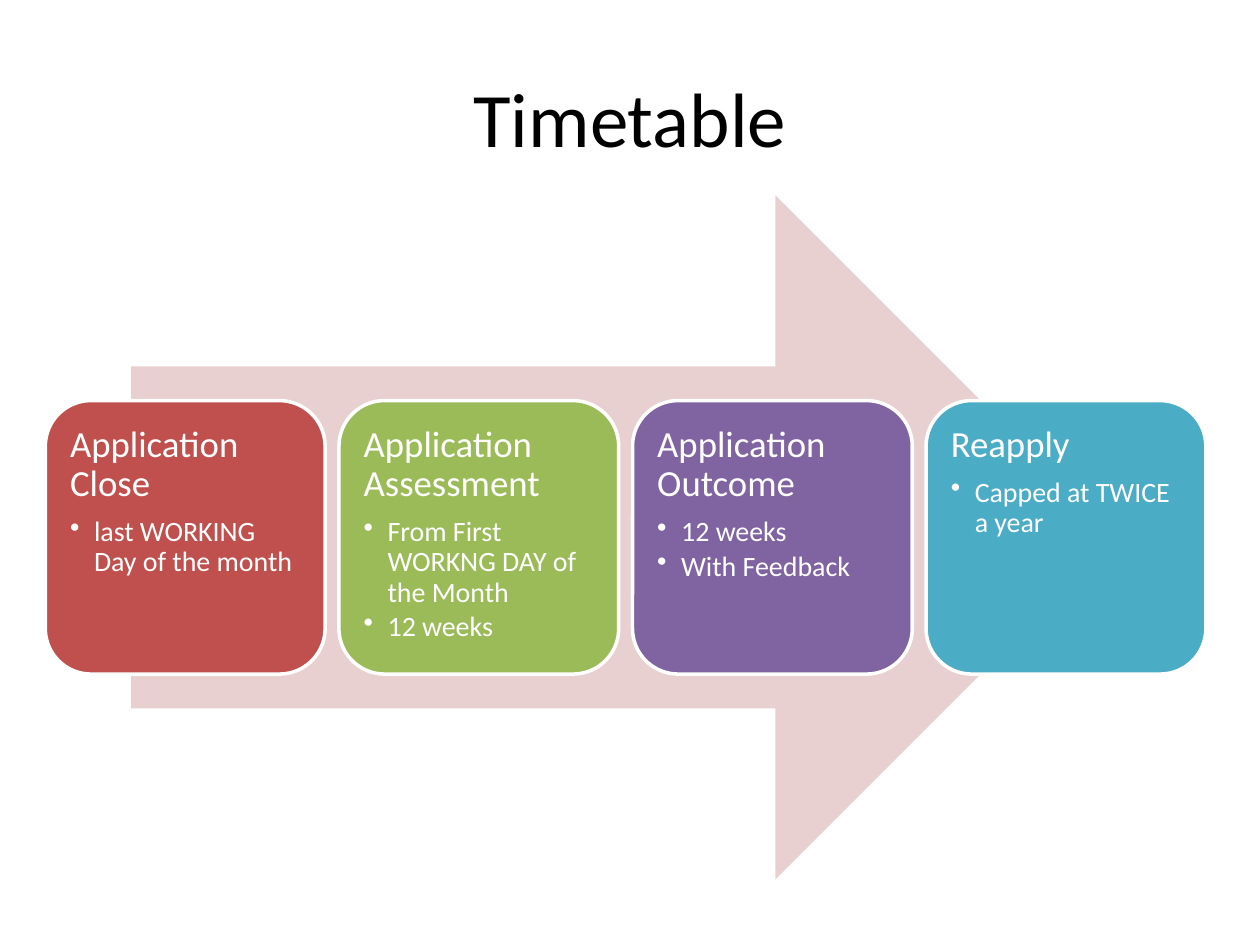
from dataclasses import dataclass

from lxml.etree import SubElement as Sub
from pptx import Presentation as Deck
from pptx.dml.color import RGBColor as Rgb
from pptx.enum.shapes import MSO_SHAPE as Kind
from pptx.enum.text import MSO_ANCHOR as Anchor, PP_ALIGN as Align
from pptx.oxml.ns import qn
from pptx.util import Inches, Pt


@dataclass(frozen=True)
class Theme:
    font: str = "Calibri"
    dark: str = "000000"
    light: str = "FFFFFF"
    arrow: str = "E8D0D0"
    title: float = 44
    head: float = 21
    item: float = 16
    edge: float = 2


@dataclass(frozen=True)
class Box:
    left: float
    top: float
    width: float
    height: float

    def emu(self) -> tuple:
        return tuple(map(Inches, (self.left, self.top, self.width, self.height)))


@dataclass(frozen=True)
class Stage:
    head: str
    items: tuple[str, ...]
    fill: str


THEME = Theme()
FIRST = Box(0.36, 3.18, 2.22, 2.17)
PITCH = 2.33
PAD = 0.09
INDENT = 0.19
STAGES = (
    Stage("Application Close", ("last WORKING Day of the month",), "C0504D"),
    Stage("Application Assessment",
          ("From First WORKNG DAY of the Month", "12 weeks"), "9BBB59"),
    Stage("Application Outcome", ("12 weeks", "With Feedback"), "8064A2"),
    Stage("Reapply", ("Capped at TWICE a year",), "4BACC6"),
)


def write(para, text: str, *, size: float, color: str, align=Align.LEFT,
          lines: float = 1, after: float = 0, bullet: bool = False) -> None:
    para.alignment = align
    para.line_spacing = lines
    para.space_before = Pt(0)
    para.space_after = Pt(after)
    if bullet:
        props = para._p.get_or_add_pPr()
        props.set("marL", str(Inches(INDENT)))
        props.set("indent", str(-Inches(INDENT)))
        Sub(props, qn("a:buChar"), char="•")
    run = para.add_run()
    run.text = text
    run.font.name = THEME.font
    run.font.size = Pt(size)
    run.font.color.rgb = Rgb.from_string(color)


def add_shape(slide, kind, box: Box, fill: str):
    shape = slide.shapes.add_shape(kind, *box.emu())
    shape.shadow.inherit = False
    shape.fill.solid()
    shape.fill.fore_color.rgb = Rgb.from_string(fill)
    shape.line.fill.background()
    return shape


def add_title(slide, text: str) -> None:
    frame = slide.shapes.add_textbox(*Box(0.5, 0.3, 9, 1.25).emu()).text_frame
    frame.word_wrap = True
    frame.vertical_anchor = Anchor.MIDDLE
    write(frame.paragraphs[0], text, size=THEME.title, color=THEME.dark,
          align=Align.CENTER)


def add_stage(slide, stage: Stage, box: Box) -> None:
    card = add_shape(slide, Kind.ROUNDED_RECTANGLE, box, stage.fill)
    card.line.color.rgb = Rgb.from_string(THEME.light)
    card.line.width = Pt(THEME.edge)
    frame = card.text_frame
    frame.word_wrap = True
    frame.vertical_anchor = Anchor.TOP
    frame.margin_left = frame.margin_right = Inches(PAD)
    frame.margin_top = frame.margin_bottom = Inches(PAD)
    write(frame.paragraphs[0], stage.head, size=THEME.head,
          color=THEME.light, lines=0.9, after=0.35 * THEME.head)
    for item in stage.items:
        write(frame.add_paragraph(), item, size=THEME.item, color=THEME.light,
              lines=0.9, after=0.15 * THEME.item, bullet=True)


def main() -> None:
    deck = Deck()
    deck.slide_width, deck.slide_height = Inches(10), Inches(7.5)
    slide = deck.slides.add_slide(deck.slide_layouts[6])
    add_title(slide, "Timetable")
    add_shape(slide, Kind.RIGHT_ARROW, Box(1.04, 1.55, 7.83, 5.43), THEME.arrow)
    for i, stage in enumerate(STAGES):
        left = FIRST.left + i * PITCH
        add_stage(slide, stage, Box(left, FIRST.top, FIRST.width, FIRST.height))
    deck.save("out.pptx")


if __name__ == "__main__":
    main()
